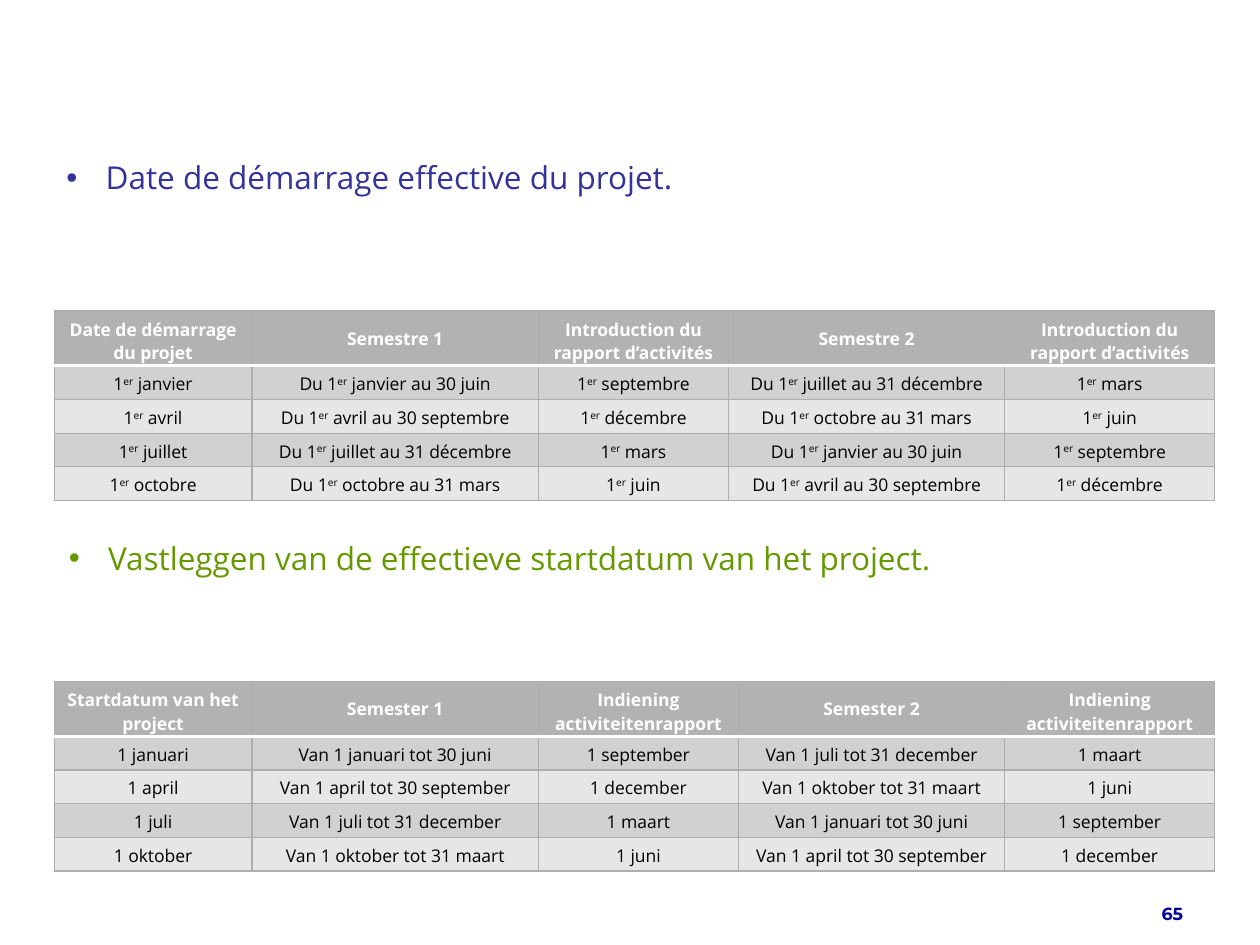
from dataclasses import dataclass

from lxml import etree
from pptx import Presentation
from pptx.dml.color import RGBColor
from pptx.enum.text import MSO_ANCHOR, PP_ALIGN
from pptx.oxml.ns import qn
from pptx.util import Cm, Pt

CENTER, RIGHT = PP_ALIGN.CENTER, PP_ALIGN.RIGHT
MIDDLE = MSO_ANCHOR.MIDDLE
BLANK_LAYOUT = 6
ORDINAL = "er"


@dataclass(frozen=True)
class Theme:
    body_font: str = "Open Sans"
    number_font: str = "Montserrat"
    french: str = "333399"
    dutch: str = "669900"
    number: str = "000099"
    header: str = "B2B2B2"
    bands: tuple = ("D1D1D1", "E6E6E6")
    grid: str = "AEAEAE"
    white: str = "FFFFFF"
    black: str = "000000"
    heading_size: int = 18
    small_size: int = 10
    grid_width: float = 0.75
    rule_width: float = 2


class SlideBuilder:
    def __init__(self, slide, theme):
        self.slide = slide
        self.theme = theme

    def style(self, paragraph, size, color, font=None, bold=False):
        paragraph.font.name = font or self.theme.body_font
        paragraph.font.size = Pt(size)
        paragraph.font.bold = bold
        paragraph.font.color.rgb = RGBColor.from_string(color)

    def text_frame(self, left, top, width, height):
        box = self.slide.shapes.add_textbox(Cm(left), Cm(top), Cm(width), Cm(height))
        box.text_frame.word_wrap = True
        return box.text_frame

    def bullet(self, text, left, top, width, height, color):
        paragraph = self.text_frame(left, top, width, height).paragraphs[0]
        paragraph.text = text
        properties = paragraph._p.get_or_add_pPr()
        indent = Cm(0.79)
        properties.set("marL", str(indent))
        properties.set("indent", str(-indent))
        etree.SubElement(properties, qn("a:buFont"), typeface="Arial")
        etree.SubElement(properties, qn("a:buChar"), char="•")
        self.style(paragraph, self.theme.heading_size, color)

    def page_number(self, text, left, top, width, height):
        frame = self.text_frame(left, top, width, height)
        frame.vertical_anchor = MIDDLE
        paragraph = frame.paragraphs[0]
        paragraph.text = text
        paragraph.alignment = RIGHT
        self.style(paragraph, self.theme.small_size, self.theme.number,
                   self.theme.number_font, True)

    def borders(self, cell, white_side):
        properties = cell._tc.get_or_add_tcPr()
        for position, side in enumerate(("lnL", "lnR", "lnT", "lnB")):
            is_rule = side == white_side
            width = self.theme.rule_width if is_rule else self.theme.grid_width
            line = etree.Element(qn(f"a:{side}"), w=str(Pt(width)))
            fill = etree.SubElement(line, qn("a:solidFill"))
            color = self.theme.white if is_rule else self.theme.grid
            etree.SubElement(fill, qn("a:srgbClr"), val=color)
            properties.insert(position, line)

    def cell(self, cell, text, row_number):
        is_header = row_number == 0
        theme = self.theme
        cell.vertical_anchor = MIDDLE
        cell.fill.solid()
        background = theme.header if is_header else theme.bands[(row_number - 1) % 2]
        cell.fill.fore_color.rgb = RGBColor.from_string(background)
        self.borders(cell, {0: "lnB", 1: "lnT"}.get(row_number))
        paragraph = cell.text_frame.paragraphs[0]
        paragraph.alignment = CENTER
        self.style(paragraph, theme.small_size,
                   theme.white if is_header else theme.black, bold=is_header)
        before, ordinal, after = text.partition(f"1{ORDINAL} ")
        if not ordinal:
            paragraph.add_run().text = text
            return
        paragraph.add_run().text = f"{before}1"
        suffix = paragraph.add_run()
        suffix.text = ORDINAL
        suffix.font._element.set("baseline", "30000")
        paragraph.add_run().text = f" {after}"

    def table(self, rows, left, top, widths, height):
        frame = self.slide.shapes.add_table(
            len(rows), len(widths), Cm(left), Cm(top), Cm(sum(widths)), Cm(height))
        table = frame.table
        table.horz_banding = False
        for column, width in zip(table.columns, widths):
            column.width = Cm(width)
        for row_number, texts in enumerate(rows):
            table.rows[row_number].height = Cm(0.64 if row_number else 0.86)
            for column_number, text in enumerate(texts):
                self.cell(table.cell(row_number, column_number), text, row_number)
        frame.height = Cm(height)


def schedule(header, starts, semesters, reports):
    start, first, report, second = header
    later_semesters = semesters[2:] + semesters[:2]
    later_reports = reports[2:] + reports[:2]
    return [(start, first, report, second, report),
            *zip(starts, semesters, reports, later_semesters, later_reports)]


def main():
    theme = Theme()
    presentation = Presentation()
    presentation.slide_width = Cm(25.4)
    presentation.slide_height = Cm(19.05)
    slide = presentation.slides.add_slide(presentation.slide_layouts[BLANK_LAYOUT])
    builder = SlideBuilder(slide, theme)

    french_schedule = schedule(
        ("Date de démarrage du projet", "Semestre 1",
         "Introduction du rapport d’activités", "Semestre 2"),
        ["1er janvier", "1er avril", "1er juillet", "1er octobre"],
        ["Du 1er janvier au 30 juin", "Du 1er avril au 30 septembre",
         "Du 1er juillet au 31 décembre", "Du 1er octobre au 31 mars"],
        ["1er septembre", "1er décembre", "1er mars", "1er juin"])
    dutch_schedule = schedule(
        ("Startdatum van het project", "Semester 1",
         "Indiening activiteitenrapport", "Semester 2"),
        ["1 januari", "1 april", "1 juli", "1 oktober"],
        ["Van 1 januari tot 30 juni", "Van 1 april tot 30 september",
         "Van 1 juli tot 31 december", "Van 1 oktober tot 31 maart"],
        ["1 september", "1 december", "1 maart", "1 juni"])

    builder.page_number("65", 22.5, 17.91, 1.6, 1.02)
    builder.bullet("Date de démarrage effective du projet.",
                   1.09, 3.07, 24.61, 5.59, theme.french)
    builder.table(french_schedule, 1.09, 6.27, (3.99, 5.77, 3.84, 5.56, 4.24), 3.81)
    builder.bullet("Vastleggen van de effectieve startdatum van het project.",
                   1.14, 10.74, 24.61, 3.05, theme.dutch)
    builder.table(dutch_schedule, 1.09, 13.74, (3.99, 5.77, 4.04, 5.36, 4.24), 3.81)
    presentation.save("out.pptx")


if __name__ == "__main__":
    main()
